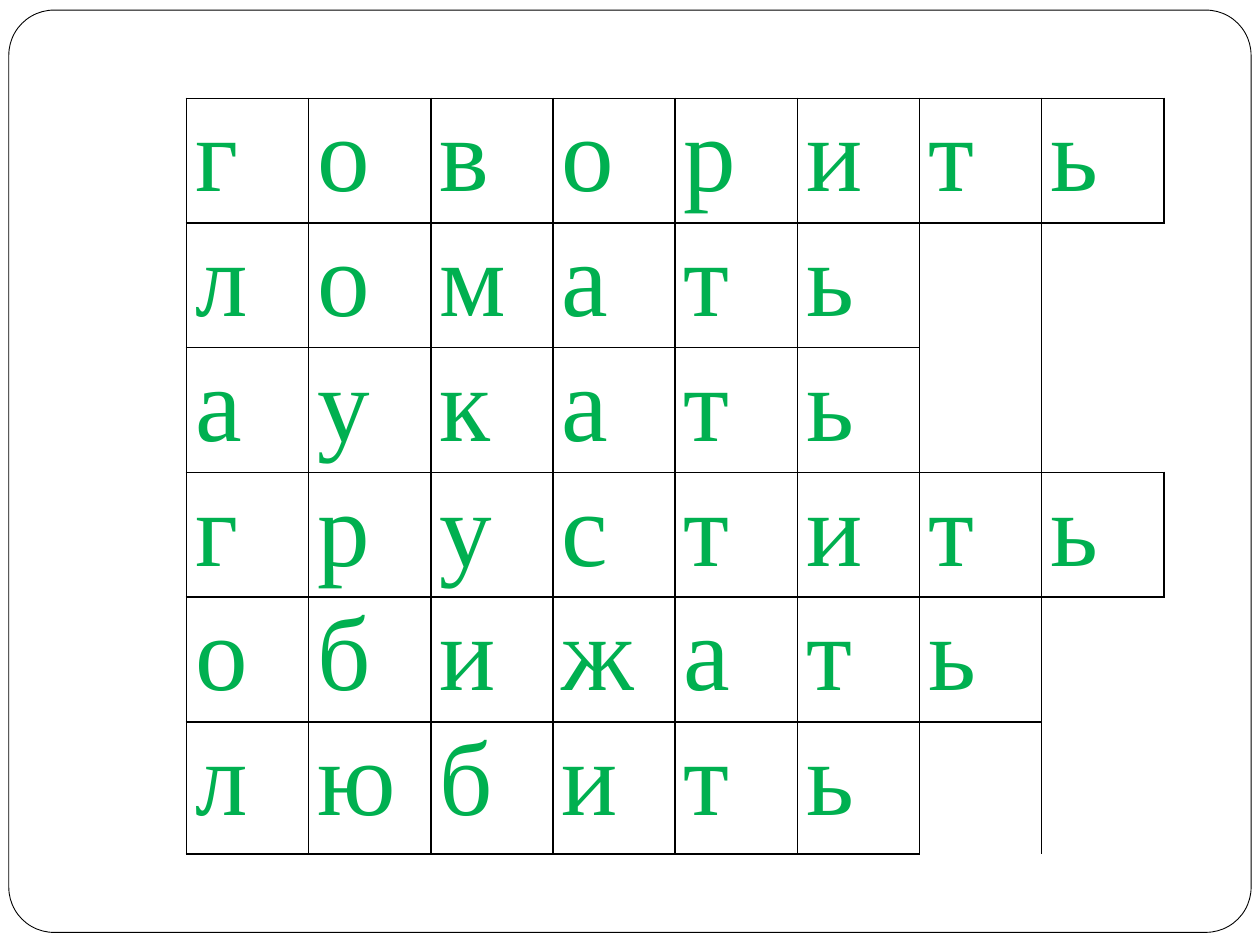
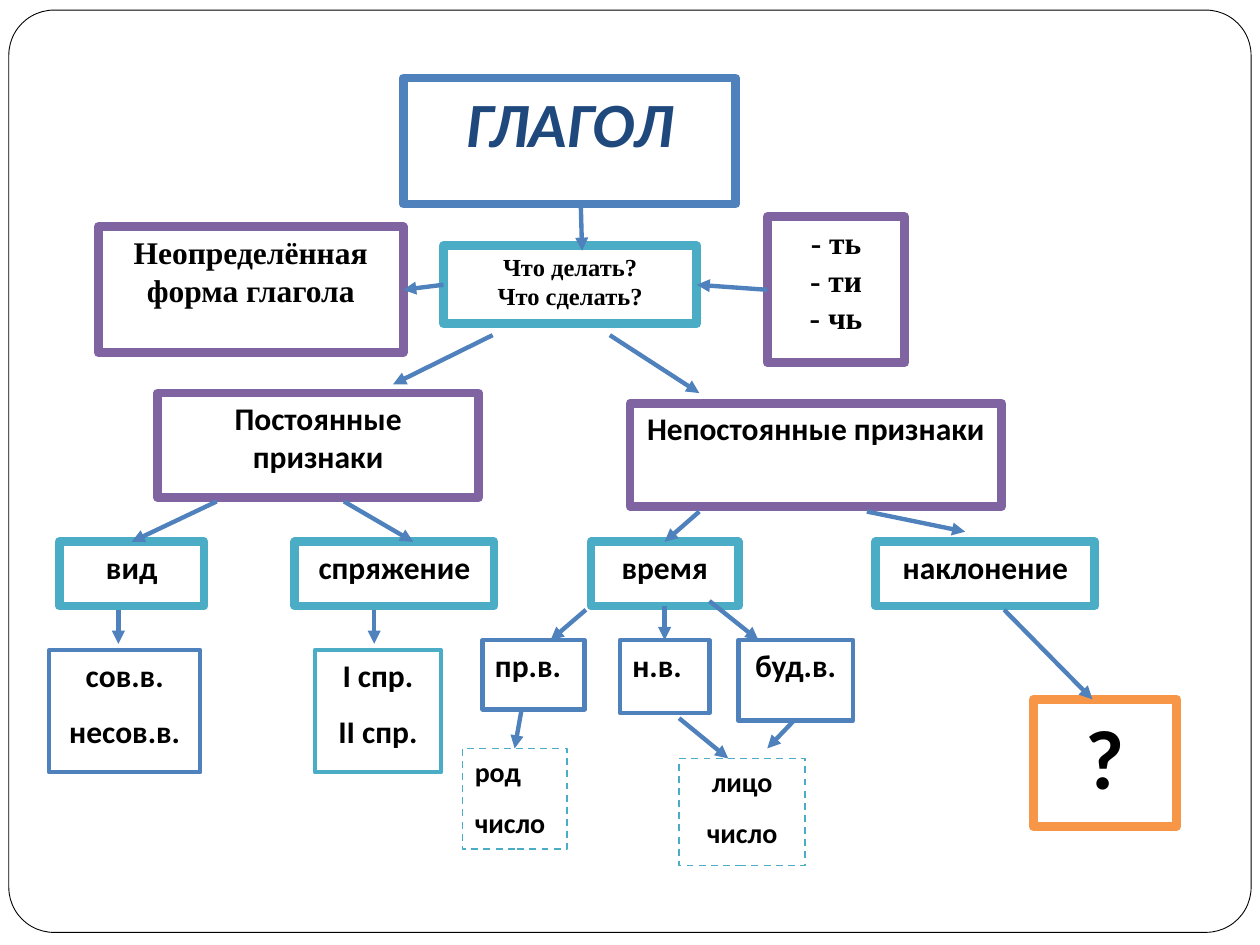
from lxml import etree
from pptx import Presentation
from pptx.dml.color import RGBColor
from pptx.enum.dml import MSO_LINE
from pptx.enum.shapes import MSO_CONNECTOR, MSO_SHAPE
from pptx.enum.text import MSO_ANCHOR, PP_ALIGN
from pptx.oxml.ns import qn
from pptx.util import Inches, Pt

WHITE, BLACK, NAVY, GREEN = "FFFFFF", "000000", "1F497D", "00B050"
BLUE, PURPLE, TEAL, ORANGE = "4F81BD", "8064A2", "4BACC6", "F79646"
SANS, SERIF = "Calibri", "Times New Roman"
TOP, LEFT, BOTTOM, RIGHT = range(4)
PLAIN_TABLE_STYLE = "{2D5ABB26-0587-4C30-8999-92F81FD0307C}"

# Slide 1: one verb per row; blanks that run down two rows are merged
VERBS = ["говорить", "ломать", "аукать", "грустить", "обижать", "любить"]
COLUMNS = 8
TALL_BLANKS = [(1, 6), (1, 7), (4, 7)]
GRID_LEFT, GRID_TOP, CELL_WIDTH = 1.48, 0.78, 0.97
ROW_HEIGHTS = [0.99] * 5 + [1.05]

# Slide 2: key -> (left, top, width, height), line colour, lines of text, changes to the usual look
SERIF_LOOK = {"font": SERIF, "after": 0}
THIN = {"weight": 2.5}
THIN_LEFT = {"weight": 2.5, "align": PP_ALIGN.LEFT}
DASHED = {"weight": 1, "dash": True, "size": 16}
BOXES = {
    "verb": ((3.2, 0.62, 2.64, 1), BLUE, ["ГЛАГОЛ"],
             {"size": 36, "color": NAVY, "italic": True}),
    "infinitive": ((0.78, 1.8, 2.42, 1), PURPLE, ["Неопределённая форма глагола"], SERIF_LOOK),
    "question": ((3.52, 1.95, 2.01, 0.62), TEAL, ["Что делать?", "Что сделать?"],
                 {**SERIF_LOOK, "size": 14}),
    "endings": ((6.09, 1.72, 1.09, 1.16), PURPLE, ["- ть", "- ти", "- чь"], SERIF_LOOK),
    "constant": ((1.25, 3.12, 2.55, 0.83), PURPLE, ["Постоянные признаки"], {}),
    "variable": ((5, 3.2, 2.95, 0.82), PURPLE, ["Непостоянные признаки"], {}),
    "aspect": ((0.47, 4.3, 1.15, 0.51), TEAL, ["вид"], {}),
    "conjugation": ((2.34, 4.3, 1.58, 0.51), TEAL, ["спряжение"], {}),
    "tense": ((4.69, 4.3, 1.17, 0.51), TEAL, ["время"], {}),
    "mood": ((6.95, 4.3, 1.74, 0.51), TEAL, ["наклонение"], {}),
    "aspects": ((0.39, 5.16, 1.2, 0.97), BLUE, ["сов.в.", "несов.в."], THIN),
    "conjugations": ((2.5, 5.16, 1, 0.97), TEAL, ["I спр.", "II спр."], THIN),
    "past": ((3.83, 5.08, 0.81, 0.55), BLUE, ["пр.в."], THIN_LEFT),
    "present": ((4.92, 5.08, 0.71, 0.58), BLUE, ["н.в."], THIN_LEFT),
    "future": ((5.86, 5.08, 0.91, 0.64), BLUE, ["буд.в."], THIN),
    "moods": ((8.2, 5.55, 1.14, 1.01), ORANGE, ["?"], {"size": 48}),
    "gender": ((3.67, 5.94, 0.83, 0.8), TEAL, ["род", "число"],
               {**DASHED, "align": PP_ALIGN.LEFT}),
    "person": ((5.39, 6.02, 1, 0.85), TEAL, ["лицо", "число"], DASHED),
}
# Each end is a point or (box key, side)
ARROWS = [
    ((4.61, 1.64), (4.62, 1.99)),
    (("question", LEFT), ("infinitive", RIGHT)),
    (("endings", LEFT), ("question", RIGHT)),
    ((3.91, 2.66), (3.12, 3.05)),
    ((4.84, 2.66), (5.55, 3.12)),
    ((1.72, 3.98), ("aspect", TOP)),
    ((2.73, 3.98), (3.28, 4.3)),
    ((0.94, 4.84), (0.94, 5.11)),
    ((2.97, 4.84), (2.97, 5.11)),
    ((5.55, 4.06), ("tense", TOP)),
    ((6.88, 4.06), (7.66, 4.22)),
    ((4.65, 4.84), (4.37, 5.08)),
    (("tense", BOTTOM), ("present", TOP)),
    ((5.63, 4.77), (6.02, 5.08)),
    ((7.97, 4.84), (8.67, 5.55)),
    ((5.39, 5.7), (5.78, 6.02)),
    ((6.31, 5.71), (6.09, 5.94)),
    ((4.14, 5.63), ("gender", TOP)),
]


def rgb(color):
    return RGBColor.from_string(color)


def add_outlined(slide, kind, place, color, weight):
    """Add a white shape with a coloured outline and no shadow."""
    shape = slide.shapes.add_shape(kind, *map(Inches, place))
    shape.shadow.inherit = False
    shape.fill.solid()
    shape.fill.fore_color.rgb = rgb(WHITE)
    shape.line.color.rgb = rgb(color)
    shape.line.width = Pt(weight)
    return shape


def add_framed_slide(deck):
    slide = deck.slides.add_slide(deck.slide_layouts[6])
    frame = add_outlined(slide, MSO_SHAPE.ROUNDED_RECTANGLE, (0.07, 0.08, 9.86, 7.32), BLACK, 0.5)
    frame.adjustments[0] = 0.049
    return slide


def add_run(paragraph, text, font, size, color, bold=False, italic=False):
    run = paragraph.add_run()
    run.text = text
    run.font.name, run.font.size = font, Pt(size)
    run.font.bold, run.font.italic = bold, italic
    run.font.color.rgb = rgb(color)


def has_letter(row, column):
    return 0 <= row < len(VERBS) and 0 <= column < len(VERBS[row])


def draw_borders(cell, row, column):
    """Line every side that touches a letter."""
    below = row + (2 if (row, column) in TALL_BLANKS else 1)
    neighbours = {"L": (row, column - 1), "R": (row, column + 1),
                  "T": (row - 1, column), "B": (below, column)}
    properties = cell._tc.get_or_add_tcPr()
    for side, neighbour in neighbours.items():
        if has_letter(row, column) or has_letter(*neighbour):
            border = etree.SubElement(properties, qn("a:ln" + side), w=str(Pt(1)))
            fill = etree.SubElement(border, qn("a:solidFill"))
            etree.SubElement(fill, qn("a:srgbClr"), val=BLACK)


def add_verb_grid(slide):
    grid = slide.shapes.add_table(
        len(VERBS), COLUMNS, Inches(GRID_LEFT), Inches(GRID_TOP),
        Inches(CELL_WIDTH * COLUMNS), Inches(sum(ROW_HEIGHTS))).table
    grid.first_row = grid.horz_banding = False
    grid._tbl.tblPr.find(qn("a:tableStyleId")).text = PLAIN_TABLE_STYLE
    for column in grid.columns:
        column.width = Inches(CELL_WIDTH)
    for row, height in zip(grid.rows, ROW_HEIGHTS):
        row.height = Inches(height)
    for row, column in TALL_BLANKS:
        grid.cell(row, column).merge(grid.cell(row + 1, column))
    for row, verb in enumerate(VERBS):
        for column in range(COLUMNS):
            cell = grid.cell(row, column)
            cell.margin_left = cell.margin_right = Inches(0.07)
            cell.margin_top = cell.margin_bottom = 0
            draw_borders(cell, row, column)
            cell.fill.background()
            if has_letter(row, column):
                add_run(cell.text_frame.paragraphs[0], verb[column], SERIF, 60, GREEN)


def add_box(slide, place, line_color, lines, weight=5, dash=False, font=SANS, size=18,
            color=BLACK, italic=False, align=PP_ALIGN.CENTER, after=10):
    box = add_outlined(slide, MSO_SHAPE.RECTANGLE, place, line_color, weight)
    if dash:
        box.line.dash_style = MSO_LINE.DASH
    frame = box.text_frame
    frame.word_wrap = True
    frame.vertical_anchor = MSO_ANCHOR.TOP
    for index, line in enumerate(lines):
        paragraph = frame.add_paragraph() if index else frame.paragraphs[0]
        paragraph.alignment = align
        paragraph.space_after = Pt(after)
        add_run(paragraph, line, font, size, color, bold=True, italic=italic)
    return box


def add_arrow(slide, boxes, start, end):
    arrow = slide.shapes.add_connector(MSO_CONNECTOR.STRAIGHT, 0, 0, 0, 0)
    if start[0] in boxes:
        arrow.begin_connect(boxes[start[0]], start[1])
    else:
        arrow.begin_x, arrow.begin_y = map(Inches, start)
    if end[0] in boxes:
        arrow.end_connect(boxes[end[0]], end[1])
    else:
        arrow.end_x, arrow.end_y = map(Inches, end)
    arrow.line.color.rgb = rgb(BLUE)
    arrow.line.width = Pt(2.5)
    etree.SubElement(arrow.line._get_or_add_ln(), qn("a:tailEnd"), type="triangle")
    etree.SubElement(arrow._element.spPr, qn("a:effectLst"))


def main():
    deck = Presentation()
    deck.slide_width, deck.slide_height = Inches(10), Inches(7.5)

    add_verb_grid(add_framed_slide(deck))

    scheme = add_framed_slide(deck)
    boxes = {key: add_box(scheme, place, color, lines, **look)
             for key, (place, color, lines, look) in BOXES.items()}
    for start, end in ARROWS:
        add_arrow(scheme, boxes, start, end)

    deck.save("out.pptx")


if __name__ == "__main__":
    main()
